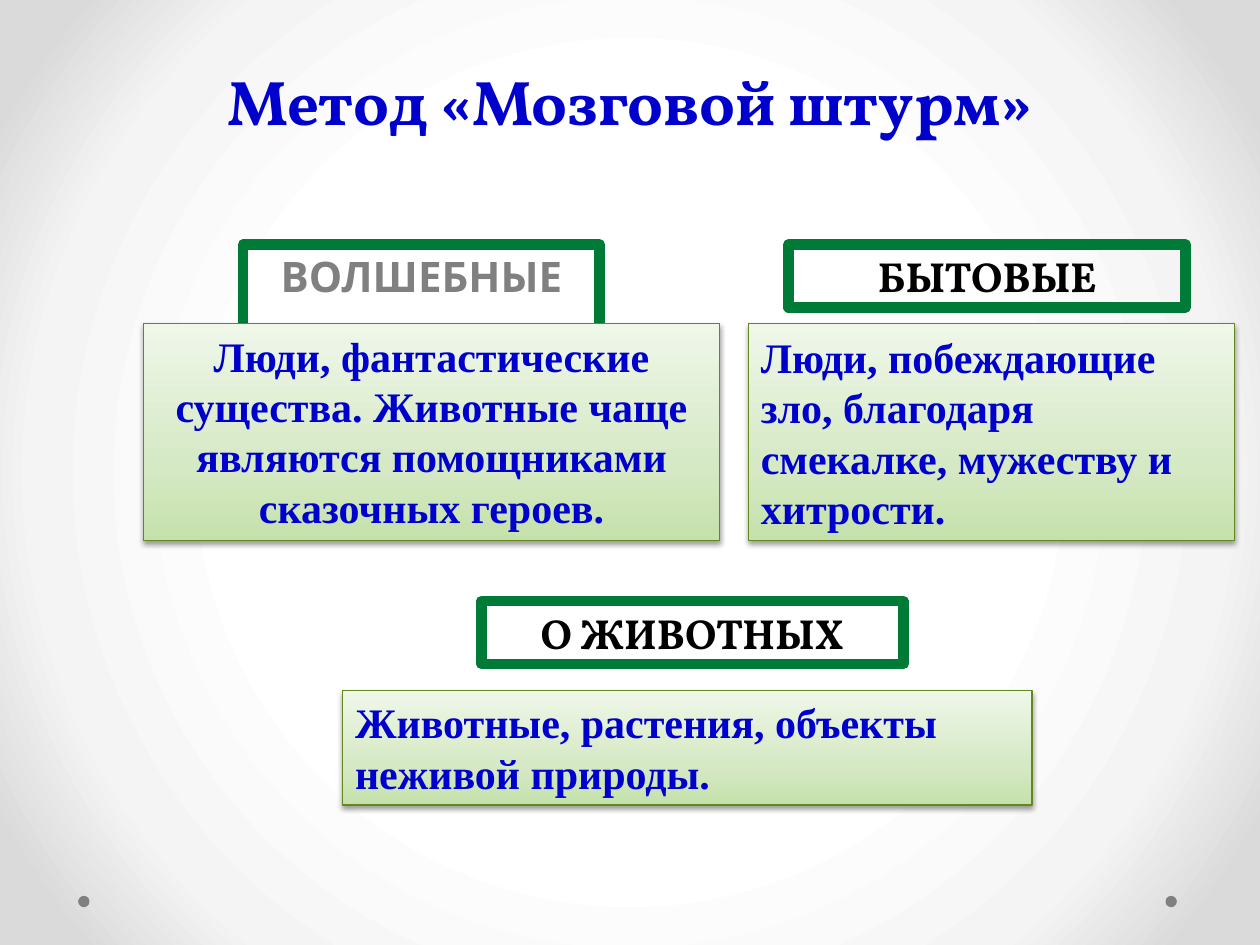
import pptx
import pptx.util
import pptx.dml.color
import pptx.enum.shapes
import pptx.enum.text
import pptx.oxml
import pptx.oxml.ns

Inches, Pt = pptx.util.Inches, pptx.util.Pt
RGB = pptx.dml.color.RGBColor.from_string
ALIGN = pptx.enum.text.PP_ALIGN
ANCHOR = pptx.enum.text.MSO_ANCHOR
SHAPE = pptx.enum.shapes.MSO_SHAPE
NS = pptx.oxml.ns.nsdecls("a")

COLORS = {
    "text": "0000CC", "black": "000000", "gray": "808080",
    "frame": "007A37", "card_line": "62891C",
}
PAGE_STOPS = [(0, "FFFFFF"), (50, "FFFFFF"), (76, "F4F4F4"), (92, "DADADA"), (100, "DADADA")]
CARD_STOPS = [(0, "C5E1AB"), (35, "D6E9C5"), (100, "EFF7E9")]


def set_gradient(fill, owner, stops, direction):
    """Fill with a gradient of any number of stops."""
    fill.gradient()
    old = owner.find(".//" + pptx.oxml.ns.qn("a:gradFill"))
    marks = "".join(
        f'<a:gs pos="{place * 1000}"><a:srgbClr val="{color}"/></a:gs>' for place, color in stops)
    new = pptx.oxml.parse_xml(
        f'<a:gradFill {NS} rotWithShape="1"><a:gsLst>{marks}</a:gsLst>{direction}</a:gradFill>')
    old.getparent().replace(old, new)


def write(shape, text, size, font, color, align, anchor):
    """Put one bold paragraph into a shape and return it."""
    frame = shape.text_frame
    frame.text = text
    frame.word_wrap = True
    frame.auto_size = pptx.enum.text.MSO_AUTO_SIZE.NONE
    frame.vertical_anchor = anchor
    para = frame.paragraphs[0]
    para.alignment = align
    span = para.runs[0].font
    span.size, span.name, span.bold = Pt(size), font, True
    span.color.rgb = RGB(COLORS[color])
    return para


deck = pptx.Presentation()
deck.slide_width, deck.slide_height = Inches(10), Inches(7.5)
page = deck.slides.add_slide(deck.slide_layouts[1])

# Background
set_gradient(page.background.fill, page.element, PAGE_STOPS,
             '<a:path path="circle"><a:fillToRect l="50000" t="50000" r="50000" b="50000"/></a:path>')

# Corner dots
for left in (9.25, 0.62):
    dot = page.shapes.add_shape(SHAPE.OVAL, Inches(left), Inches(7.11), Inches(0.09), Inches(0.09))
    dot.fill.solid()
    dot.fill.fore_color.rgb = RGB(COLORS["gray"])
    dot.line.fill.background()
    dot.shadow.inherit = False

# Title
title = page.shapes.title
title.left, title.top, title.width, title.height = Inches(0.5), Inches(0), Inches(9), Inches(1.15)
para = write(title, "Метод «Мозговой штурм»", 36, "Vollkorn", "text", ALIGN.CENTER, ANCHOR.BOTTOM)
para.line_spacing = Pt(58)

# Framed headings; the first is the body placeholder
headings = [
    ("ВОЛШЕБНЫЕ", 1.93, 1.94, 2.83, 0.7, "League Spartan", "gray", ANCHOR.TOP),
    ("БЫТОВЫЕ", 6.26, 1.94, 3.15, 0.5, "Vollkorn", "black", ANCHOR.MIDDLE),
    ("О ЖИВОТНЫХ", 3.82, 4.77, 3.35, 0.5, "Vollkorn", "black", ANCHOR.MIDDLE),
]
for number, (text, left, top, width, height, font, color, anchor) in enumerate(headings):
    place = [Inches(value) for value in (left, top, width, height)]
    if number == 0:
        box = page.placeholders[1]
        box.left, box.top, box.width, box.height = place
    else:
        box = page.shapes.add_shape(SHAPE.RECTANGLE, *place)
        box.shadow.inherit = False
    box.fill.background()
    box.line.color.rgb = RGB(COLORS["frame"])
    box.line.width = Pt(6)
    para = write(box, text, 24, font, color, ALIGN.CENTER, anchor)
    para.space_before = Pt(0)
    if number == 0:
        props = para._p.get_or_add_pPr()
        props.set("marL", "0")
        props.set("indent", "0")
        props.append(pptx.oxml.parse_xml(f"<a:buNone {NS}/>"))

# Description cards
cards = [
    ("Люди, фантастические существа. Животные чаще являются помощниками сказочных героев.",
     1.14, 2.57, 4.57, 1.72, ALIGN.CENTER, ANCHOR.TOP),
    ("Люди, побеждающие зло, благодаря смекалке, мужеству и хитрости.",
     5.94, 2.57, 3.86, 1.72, ALIGN.LEFT, ANCHOR.MIDDLE),
    ("Животные, растения, объекты неживой природы.",
     2.72, 5.48, 5.47, 0.91, ALIGN.LEFT, ANCHOR.TOP),
]
for text, left, top, width, height, align, anchor in cards:
    card = page.shapes.add_shape(
        SHAPE.RECTANGLE, Inches(left), Inches(top), Inches(width), Inches(height))
    set_gradient(card.fill, card.element, CARD_STOPS, '<a:lin ang="16200000" scaled="1"/>')
    card.line.color.rgb = RGB(COLORS["card_line"])
    card.line.width = Pt(0.75)
    card.shadow.inherit = False
    effects = card.element.spPr.find(pptx.oxml.ns.qn("a:effectLst"))
    effects.append(pptx.oxml.parse_xml(
        f'<a:outerShdw {NS} blurRad="{Pt(3.1)}" dist="{Pt(1.6)}" dir="5400000" rotWithShape="0">'
        f'<a:srgbClr val="{COLORS["black"]}"><a:alpha val="38000"/></a:srgbClr></a:outerShdw>'))
    write(card, text, 24, "Times New Roman", "text", align, anchor)

deck.save("out.pptx")
